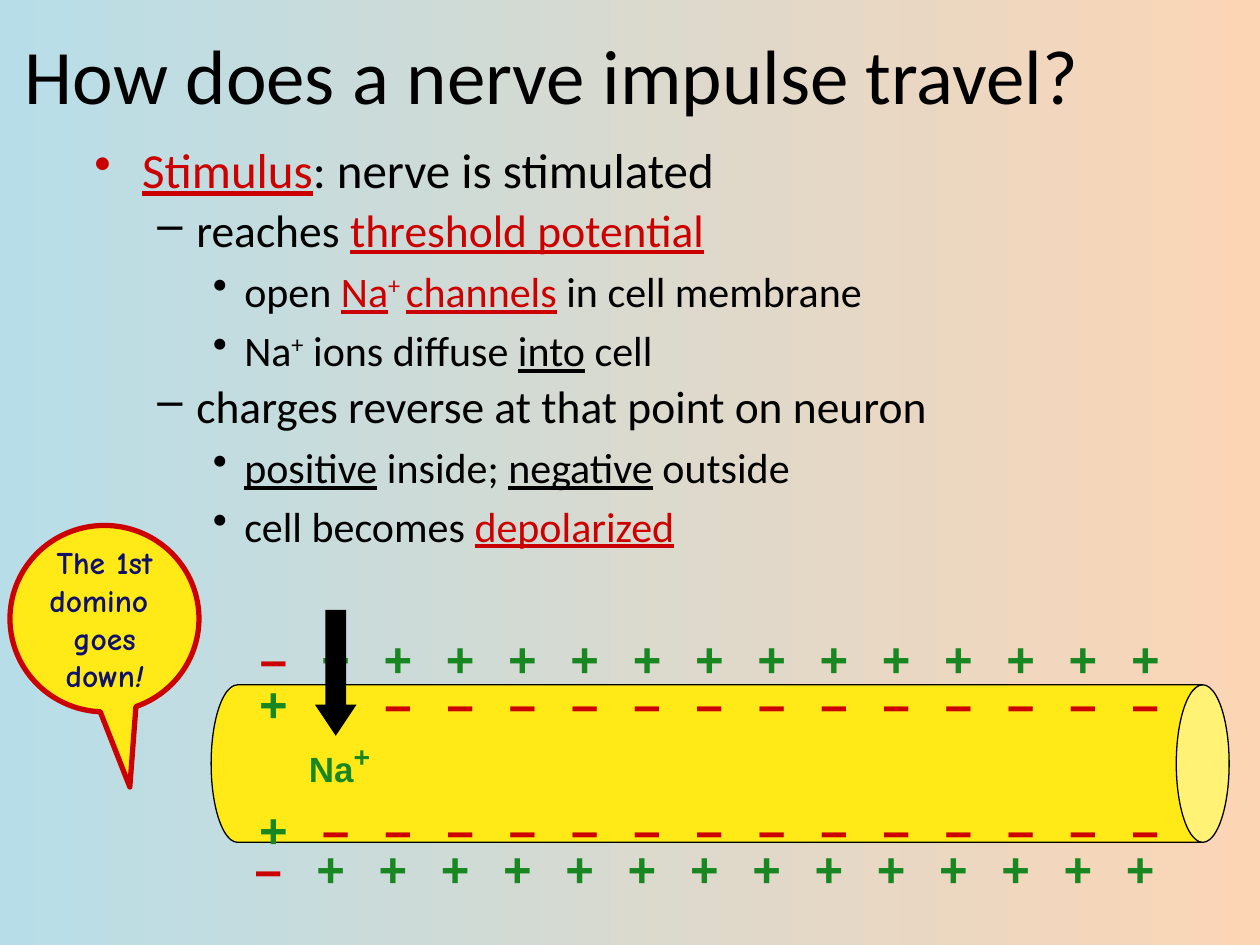
from lxml import etree
from pptx import Presentation
from pptx import util as u
from pptx.dml.color import RGBColor
from pptx.enum import shapes, text
from pptx.oxml.ns import qn

THEME = {
    "black": "000000", "red": "CC0000", "green": "198721", "yellow": "FFEA18",
    "navy": "0F116A", "sky": "B7DEE8", "peach": "FCD5B5",
    "body_font": "Calibri", "charge_font": "Arial", "callout_font": "Comic Neue",
    "title_size": 44, "level_sizes": (28, 26, 24),
    "charge_size": 28, "ion_size": 20, "callout_size": 18,
}

# Content: each run is (text, style); style words are colours or u, b, i, sup
TITLE = "How does a nerve impulse travel?"
OUTLINE = [
    (0, [("Stimulus", "red u"), (": nerve is stimulated", "")]),
    (1, [("reaches ", ""), ("threshold potential", "red u")]),
    (2, [("open ", ""), ("Na", "red u"), ("+ ", "red sup"),
         ("channels", "red u"), (" in cell membrane", "")]),
    (2, [("Na", ""), ("+", "sup"), (" ions diffuse ", ""), ("into", "u"), (" cell", "")]),
    (1, [("charges reverse at that point on neuron", "")]),
    (2, [("positive", "u"), (" inside; ", ""), ("negative", "u"), (" outside", "")]),
    (2, [("cell becomes ", ""), ("depolarized", "red u")]),
]
# Bullet, text indent, hanging indent, line spacing by level
LEVELS = [("•", 0.38, 0.38, 0.9), ("–", 0.81, 0.31, 0.9), ("•", 1.19, 0.25, 1.0)]

# Charge rows: centre of the first sign, top, signs from left to right
RESTING = 14
CHARGE_ROWS = [
    (2.17, 4.94, "–" + "+" * RESTING),
    (2.13, 6.60, "–" + "+" * RESTING),
    (2.17, 5.29, "+" + "–" * RESTING),
    (2.17, 6.29, "+" + "–" * RESTING),
]
CHARGE_PITCH = 6.92 / RESTING
CHARGE_BOX = (0.43, 0.57)
CHARGE_STYLES = {"+": "green b", "–": "red b"}
CALLOUT_LINES = ["The 1st", "domino ", "goes", "down"]


def color(name):
    return RGBColor.from_string(THEME[name])


def add_run(paragraph, words, style, font, size):
    marks = style.split()
    run = paragraph.add_run()
    run.text = words
    run.font.name, run.font.size = font, u.Pt(size)
    run.font.color.rgb = color(next((m for m in marks if m in THEME), "black"))
    if "u" in marks:
        run.font.underline = True
    if "b" in marks:
        run.font.bold = True
    if "i" in marks:
        run.font.italic = True
    if "sup" in marks:
        run._r.get_or_add_rPr().set("baseline", "30000")


def add_text_box(parent, box, anchor, wrap):
    frame = parent.add_textbox(*map(u.Inches, box)).text_frame
    frame.word_wrap = wrap
    frame.vertical_anchor = anchor
    return frame


def add_label(parent, box):
    """Centred, unwrapped label; gives back its paragraph."""
    frame = add_text_box(parent, box, text.MSO_ANCHOR.MIDDLE, False)
    frame.paragraphs[0].alignment = text.PP_ALIGN.CENTER
    return frame.paragraphs[0]


def add_solid(parent, preset, box, adjustments, fill, line=None, width=0):
    shape = parent.add_shape(preset, *map(u.Inches, box))
    shape.shadow.inherit = False
    for index, value in enumerate(adjustments):
        shape.adjustments[index] = value
    shape.fill.solid()
    shape.fill.fore_color.rgb = color(fill)
    if line:
        shape.line.color.rgb = color(line)
        shape.line.width = u.Pt(width)
    else:
        shape.line.fill.background()
    return shape


def add_outline(slide):
    frame = add_text_box(slide.shapes, (0.65, 1.11, 8.92, 3.19), text.MSO_ANCHOR.TOP, True)
    for index, (level, runs) in enumerate(OUTLINE):
        bullet, indent, hanging, spacing = LEVELS[level]
        size = THEME["level_sizes"][level]
        paragraph = frame.add_paragraph() if index else frame.paragraphs[0]
        paragraph.level = level
        paragraph.line_spacing = spacing
        paragraph.space_before = u.Pt(size * 0.2)
        props = paragraph._p.get_or_add_pPr()
        props.set("marL", str(u.Inches(indent)))
        props.set("indent", str(-u.Inches(hanging)))
        etree.SubElement(props, qn("a:buChar")).set("char", bullet)
        for words, style in runs:
            add_run(paragraph, words, style, THEME["body_font"], size)


def add_axon(slide):
    axon = slide.shapes.add_group_shape().shapes
    tube = add_solid(axon, shapes.MSO_SHAPE.CAN, (5.09, 2.02, 1.25, 8.08),
                     [0.336], "yellow", "black", 0.75)
    tube.rotation = 90

    # Charges outside and inside the membrane
    width, height = CHARGE_BOX
    for center, top, signs in CHARGE_ROWS:
        for column, sign in enumerate(signs):
            left = center + column * CHARGE_PITCH - width / 2
            add_run(add_label(axon, (left, top, width, height)), sign,
                    CHARGE_STYLES[sign], THEME["charge_font"], THEME["charge_size"])

    # Sodium entering the cell
    add_solid(axon, shapes.MSO_SHAPE.DOWN_ARROW, (2.5, 4.84, 0.33, 1), [0.5, 0.75], "black")
    sodium = add_label(axon, (2.34, 5.84, 0.71, 0.43))
    add_run(sodium, "Na", "green b", THEME["charge_font"], THEME["ion_size"])
    add_run(sodium, "+", "green b sup", THEME["charge_font"], THEME["charge_size"])


def add_callout(slide):
    callout = add_solid(slide.shapes, shapes.MSO_SHAPE.OVAL_CALLOUT, (0.08, 4.17, 1.5, 1.48),
                        [0.134, 0.903], "yellow", "red", 3)
    frame = callout.text_frame
    frame.word_wrap = False
    frame.vertical_anchor = text.MSO_ANCHOR.MIDDLE
    frame.margin_left = frame.margin_right = frame.margin_top = frame.margin_bottom = 0
    speech = frame.paragraphs[0]
    speech.alignment = text.PP_ALIGN.CENTER
    font, size = THEME["callout_font"], THEME["callout_size"]
    for index, words in enumerate(CALLOUT_LINES):
        if index:
            speech.add_line_break()
        add_run(speech, words, "navy b", font, size)
    add_run(speech, "!", "navy b i", font, size)


def main():
    deck = Presentation()
    deck.slide_width, deck.slide_height = u.Inches(10), u.Inches(7.5)
    slide = deck.slides.add_slide(deck.slide_layouts[6])

    # Background, left to right
    backdrop = slide.background.fill
    backdrop.gradient()
    backdrop.gradient_angle = 0
    for stop, position, name in zip(backdrop.gradient_stops, (0, 1), ("sky", "peach")):
        stop.position = position
        stop.color.rgb = color(name)

    # Title
    title = add_text_box(slide.shapes, (0.1, 0.17, 9, 0.83), text.MSO_ANCHOR.MIDDLE, True)
    add_run(title.paragraphs[0], TITLE, "", THEME["body_font"], THEME["title_size"])

    add_outline(slide)
    add_axon(slide)
    add_callout(slide)
    deck.save("out.pptx")


if __name__ == "__main__":
    main()
